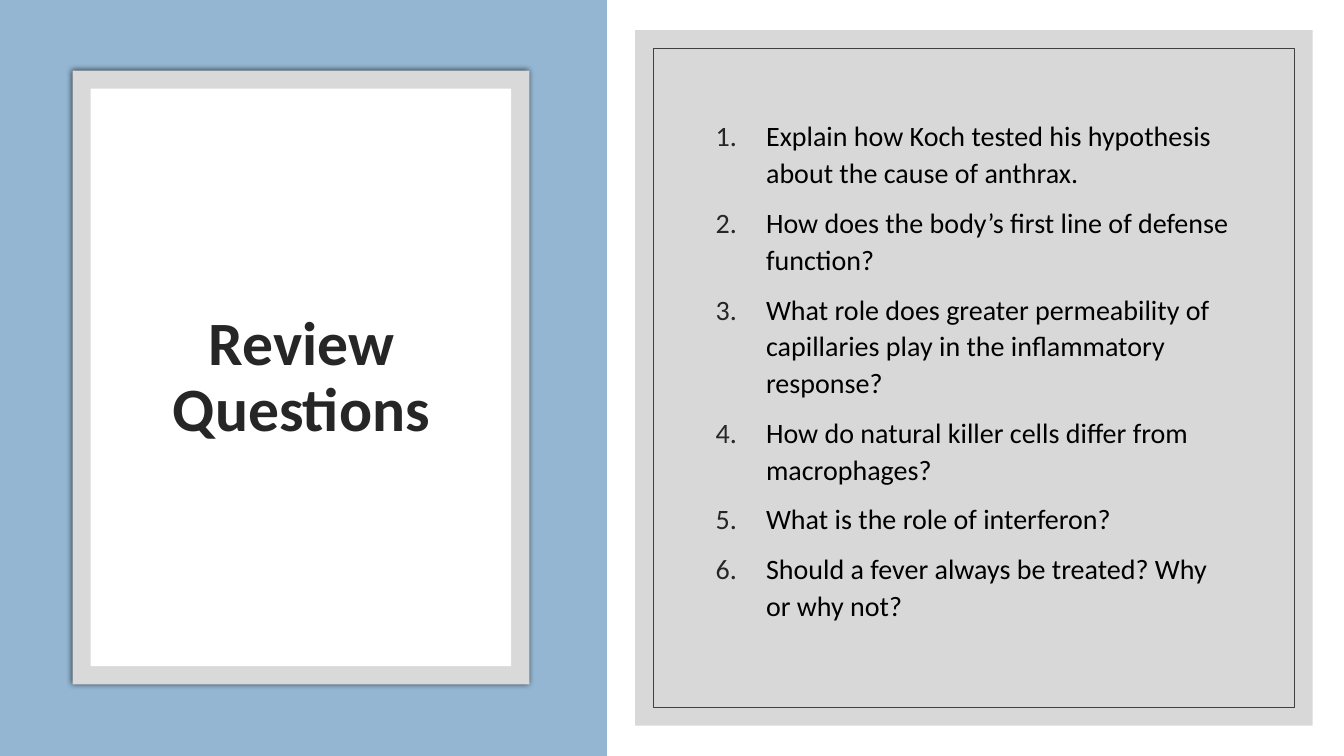
from lxml.etree import SubElement as Sub
from pptx import Presentation
from pptx.dml.color import RGBColor as RGB
from pptx.enum.shapes import MSO_SHAPE as SHAPE
from pptx.enum.text import MSO_ANCHOR as ANCHOR, MSO_AUTO_SIZE as FIT, PP_ALIGN as ALIGN
from pptx.oxml.ns import qn
from pptx.util import Inches, Pt

FONT = "Calibri"
COLORS = {
    "white": "FFFFFF",
    "blue": "94B6D2",
    "frame": "D9D9D9",
    "panel": "BFBFBF",
    "border": "404040",
    "dark": "262626",
    "black": "000000",
}
ITEMS = [
    "Explain how Koch tested his hypothesis about the cause of anthrax.",
    "How does the body’s first line of defense function?",
    "What role does greater permeability of capillaries play in the inflammatory response?",
    "How do natural killer cells differ from macrophages?",
    "What is the role of interferon?",
    "Should a fever always be treated? Why or why not?",
]


def color(name):
    return RGB.from_string(COLORS[name])


def add_rect(slide, box, fill=None, line=None):
    rect = slide.shapes.add_shape(SHAPE.RECTANGLE, *map(Inches, box))
    rect.shadow.inherit = False
    if fill:
        rect.fill.solid()
        rect.fill.fore_color.rgb = color(fill)
    else:
        rect.fill.background()
    if line:
        rect.line.color.rgb = color(line)
        rect.line.width = Pt(0.5)
    else:
        rect.line.fill.background()
    return rect


def set_alpha(node, percent):
    Sub(node, qn("a:alpha"), val=str(percent * 1000))


def add_glow(rect):
    effects = rect._element.spPr.find(qn("a:effectLst"))
    shade = Sub(effects, qn("a:outerShdw"), blurRad=str(Pt(4)), dist="0",
                dir="0", algn="ctr", rotWithShape="0")
    set_alpha(Sub(shade, qn("a:srgbClr"), val=COLORS["black"]), 66)


def style(para, size, name, space, bold=False):
    para.line_spacing = space
    for run in para.runs:
        font = run.font
        font.name = FONT
        font.size = Pt(size)
        font.bold = bold
        font.color.rgb = color(name)


def set_title(slide, box, text):
    title = slide.shapes.title
    slide.shapes._spTree.append(title._element)
    title.left, title.top, title.width, title.height = map(Inches, box)
    frame = title.text_frame
    frame.text = text
    frame.word_wrap = True
    frame.auto_size = FIT.NONE
    frame.vertical_anchor = ANCHOR.MIDDLE
    para = frame.paragraphs[0]
    para.alignment = ALIGN.CENTER
    style(para, 44, "dark", 0.9, bold=True)


def number(para):
    props = para._p.get_or_add_pPr()
    props.set("marL", str(Inches(0.5)))
    props.set("indent", str(Inches(-0.5)))
    tint = Sub(props, qn("a:buClr"))
    Sub(tint, qn("a:srgbClr"), val=COLORS["dark"])
    Sub(props, qn("a:buFont"), typeface=FONT)
    Sub(props, qn("a:buAutoNum"), type="arabicPeriod")


def add_list(slide, box, items):
    frame = slide.shapes.add_textbox(*map(Inches, box)).text_frame
    frame.word_wrap = True
    frame.vertical_anchor = ANCHOR.MIDDLE
    frame.margin_bottom = Inches(0.54)
    frame.text = "\n".join(items)
    for para in frame.paragraphs:
        style(para, 20, "black", 1.1)
        para.space_before = Pt(9)
        number(para)


def main():
    deck = Presentation()
    deck.slide_width = Inches(13.33)
    deck.slide_height = Inches(7.5)
    slide = deck.slides.add_slide(deck.slide_layouts[5])

    add_rect(slide, (0, 0, 13.33, 7.5), "white")
    add_rect(slide, (0, 0, 6.02, 7.5), "blue")
    add_glow(add_rect(slide, (0.72, 0.7, 4.53, 6.09), "frame"))
    add_rect(slide, (0.9, 0.88, 4.17, 5.73), "white")
    set_title(slide, (1.08, 1.3, 3.82, 4.91), "Review Questions")

    panel = add_rect(slide, (6.3, 0.3, 6.72, 6.9), "panel")
    set_alpha(panel._element.spPr.find(qn("a:solidFill"))[0], 60)
    add_rect(slide, (6.48, 0.48, 6.36, 6.54), line="border")
    add_list(slide, (7, 1.02, 5.33, 5.77), ITEMS)

    deck.save("out.pptx")


if __name__ == "__main__":
    main()
